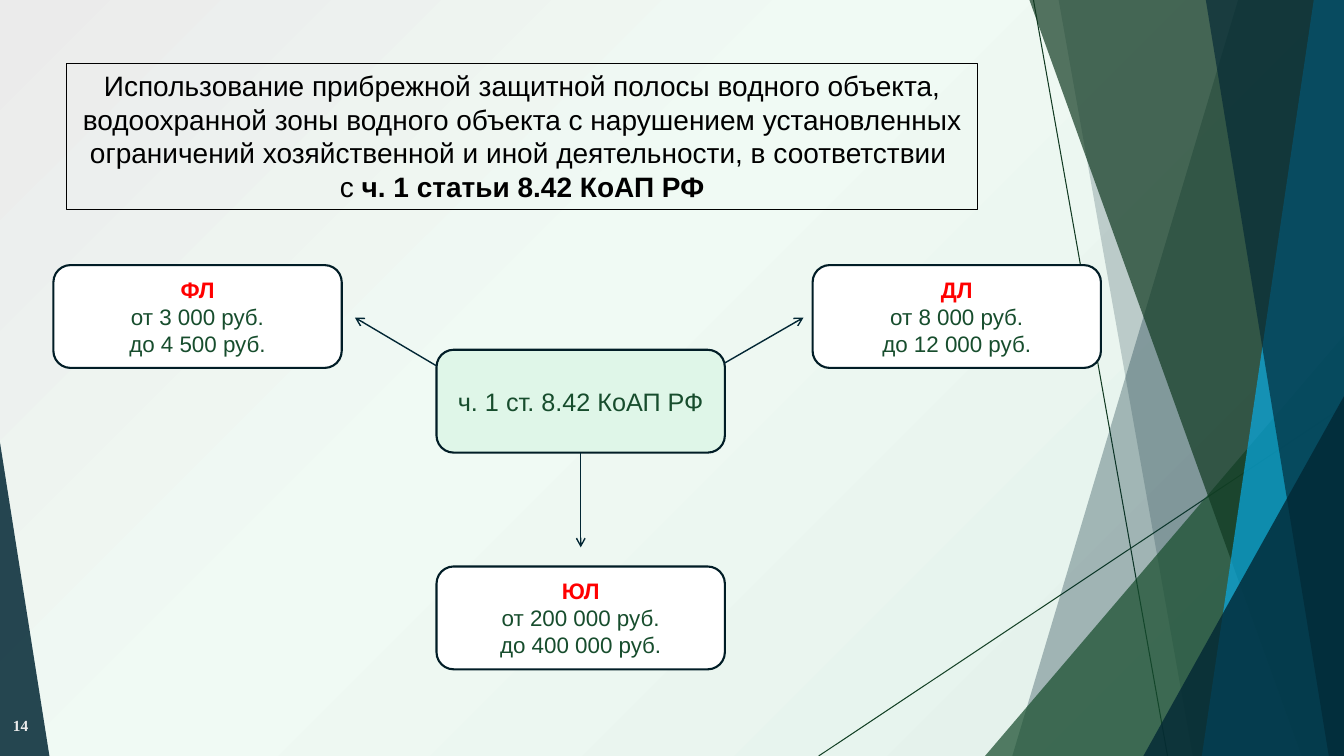
from dataclasses import dataclass

from lxml.etree import SubElement
from pptx import Presentation
from pptx.dml.color import RGBColor
from pptx.enum.shapes import MSO_CONNECTOR as CONN, MSO_SHAPE as SHAPE
from pptx.enum.text import MSO_ANCHOR as ANCHOR, MSO_AUTO_SIZE as AUTO, PP_ALIGN as ALIGN
from pptx.oxml import parse_xml
from pptx.oxml.ns import nsdecls, qn
from pptx.util import Inches, Pt

BLACK = RGBColor(0x00, 0x00, 0x00)
WHITE = RGBColor(0xFF, 0xFF, 0xFF)
RED = RGBColor(0xFF, 0x00, 0x00)
GREY = RGBColor(0xEB, 0xEB, 0xEB)
MINT = RGBColor(0xDF, 0xF6, 0xE8)
PALE = RGBColor(0xE1, 0xEF, 0xE9)
LIGHT = RGBColor(0xF0, 0xFA, 0xF4)
GREEN = RGBColor(0x17, 0x4D, 0x2D)
FOREST = RGBColor(0x11, 0x3A, 0x22)
MOSS = RGBColor(0x14, 0x41, 0x26)
NAVY = RGBColor(0x02, 0x27, 0x34)
OUTLINE = RGBColor(0x01, 0x1D, 0x26)
BLUE = RGBColor(0x09, 0xAB, 0xE4)

WIDTH, HEIGHT = 13.33, 7.5
BOX_W, BOX_H = 2.86, 1.02
BACKGROUND_STOPS = [(0, WHITE, 0), (0, PALE, 71), (58, LIGHT, 100), (100, GREY, 100)]


@dataclass
class Panel:
    """Slanted band reaching the right edge of the slide."""
    top_x: float
    bottom_x: float
    color: RGBColor
    opacity: int


@dataclass
class Triangle:
    """Right triangle standing on the bottom edge; apex 0 is left, 1 is right."""
    left: float
    top: float
    width: float
    apex: int
    color: RGBColor
    opacity: int


@dataclass
class Fine:
    left: float
    top: float
    who: str
    low: str
    high: str


FACETS = [
    Panel(12.28, 10.04, NAVY, 30),
    Panel(10.5, 11.83, NAVY, 20),
    Triangle(9.77, 3.33, 3.56, 1, GREEN, 72),
    Panel(10.21, 12.91, FOREST, 70),
    Panel(13.03, 11.92, BLUE, 70),
    Panel(11.96, 13.18, NAVY, 65),
    Triangle(11.34, 3.93, 1.99, 1, NAVY, 80),
    Triangle(0, 4.39, 0.49, 0, NAVY, 85),
]
FINES = [
    Fine(4.33, 5.62, "ЮЛ", "от 200 000 руб.", "до 400 000 руб."),
    Fine(8.06, 2.63, "ДЛ", "от 8 000 руб.", "до 12 000 руб."),
    Fine(0.53, 2.63, "ФЛ", "от 3 000 руб.", "до 4 500 руб."),
]


def set_background(s) -> None:
    stops = "".join(
        f'<a:gs pos="{pos * 1000}"><a:srgbClr val="{color}">'
        f'<a:alpha val="{opacity * 1000}"/></a:srgbClr></a:gs>'
        for pos, color, opacity in BACKGROUND_STOPS)
    bg = parse_xml(
        f'<p:bg {nsdecls("p", "a")}><p:bgPr><a:gradFill><a:gsLst>{stops}</a:gsLst>'
        '<a:path path="circle"><a:fillToRect l="100000" t="100000"/></a:path>'
        '</a:gradFill><a:effectLst/></p:bgPr></p:bg>')
    s._element.cSld.insert(0, bg)


def add_line(s, start: tuple[float, float], end: tuple[float, float],
             color: RGBColor, width: float, arrow: bool = False):
    line = s.shapes.add_connector(CONN.STRAIGHT, *map(Inches, start + end))
    line.line.color.rgb = color
    line.line.width = Pt(width)
    if arrow:
        SubElement(line.line._get_or_add_ln(), qn("a:tailEnd"), type="arrow")
    SubElement(line._element.spPr, qn("a:effectLst"))
    return line


def draw_facet(s, facet: Panel | Triangle) -> None:
    if isinstance(facet, Panel):
        corners = [(WIDTH, 0), (WIDTH, HEIGHT), (facet.bottom_x, HEIGHT)]
        builder = s.shapes.build_freeform(Inches(facet.top_x), 0)
        builder.add_line_segments([(Inches(x), Inches(y)) for x, y in corners])
        sp = builder.convert_to_shape()
    else:
        sp = s.shapes.add_shape(SHAPE.ISOSCELES_TRIANGLE, Inches(facet.left), Inches(facet.top),
                                Inches(facet.width), Inches(HEIGHT - facet.top))
        sp.adjustments[0] = facet.apex
    sp.shadow.inherit = False
    sp.line.fill.background()
    sp.fill.solid()
    sp.fill.fore_color.rgb = facet.color
    color = sp._element.spPr.find(f'{qn("a:solidFill")}/{qn("a:srgbClr")}')
    SubElement(color, qn("a:alpha"), val=str(facet.opacity * 1000))


def add_run(p, text: str, *, size: float, color: RGBColor, bold: bool = False,
            font: str = "Arial", align: ALIGN = ALIGN.CENTER) -> None:
    p.alignment = align
    r = p.add_run()
    r.text = text
    r.font.name, r.font.size, r.font.bold = font, Pt(size), bold
    r.font.color.rgb = color


def add_box(s, left: float, top: float, fill: RGBColor):
    sp = s.shapes.add_shape(SHAPE.ROUNDED_RECTANGLE, Inches(left), Inches(top),
                            Inches(BOX_W), Inches(BOX_H))
    sp.shadow.inherit = False
    sp.fill.solid()
    sp.fill.fore_color.rgb = fill
    sp.line.color.rgb = OUTLINE
    sp.line.width = Pt(1.5)
    sp.text_frame.vertical_anchor = ANCHOR.MIDDLE
    return sp


def add_heading(s) -> None:
    sp = s.shapes.title
    sp.left, sp.top, sp.width, sp.height = map(Inches, (0.66, 0.63, 9.04, 1.45))
    sp.line.color.rgb = BLACK
    sp.line.width = Pt(0.75)
    tf = sp.text_frame
    tf.word_wrap = True
    tf.auto_size = AUTO.SHAPE_TO_FIT_TEXT
    tf.vertical_anchor = ANCHOR.TOP
    add_run(tf.paragraphs[0], "Использование прибрежной защитной полосы водного объекта, "
            "водоохранной зоны водного объекта с нарушением установленных ограничений "
            "хозяйственной и иной деятельности, в соответствии ", size=20, color=BLACK)
    p = tf.add_paragraph()
    add_run(p, "с ", size=20, color=BLACK)
    add_run(p, "ч. 1 статьи 8.42 КоАП РФ", size=20, color=BLACK, bold=True)


def add_fine(s, fine: Fine) -> None:
    tf = add_box(s, fine.left, fine.top, WHITE).text_frame
    add_run(tf.paragraphs[0], fine.who, size=16, color=RED, bold=True)
    for amount in (fine.low, fine.high):
        add_run(tf.add_paragraph(), amount, size=16, color=GREEN)


def add_page_number(s) -> None:
    tf = s.shapes.add_textbox(Inches(-0.37), Inches(7), Inches(0.75), Inches(0.4)).text_frame
    tf.word_wrap = True
    tf.vertical_anchor = ANCHOR.MIDDLE
    add_run(tf.paragraphs[0], "14", size=11, color=GREY, bold=True,
            font="Times New Roman", align=ALIGN.RIGHT)


def main() -> None:
    prs = Presentation()
    prs.slide_width, prs.slide_height = Inches(WIDTH), Inches(HEIGHT)
    s = prs.slides.add_slide(prs.slide_layouts[5])

    # Background and decoration
    set_background(s)
    add_line(s, (10.25, 0), (11.58, HEIGHT), FOREST, 0.75)
    add_line(s, (WIDTH, 4.03), (8.12, HEIGHT), MOSS, 0.75)
    for facet in FACETS:
        draw_facet(s, facet)

    # Page number and heading
    add_page_number(s)
    add_heading(s)

    # Article in the centre with arrows to the fines
    article = add_box(s, 4.33, 3.47, MINT)
    add_run(article.text_frame.paragraphs[0], "ч. 1 ст. 8.42 КоАП РФ", size=18, color=GREEN)
    down = add_line(s, (5.76, 4.49), (5.76, 5.43), NAVY, 1, arrow=True)
    down.begin_connect(article, 2)
    add_line(s, (4.33, 3.63), (3.52, 3.15), NAVY, 1, arrow=True)
    add_line(s, (7.19, 3.6), (7.97, 3.15), NAVY, 1, arrow=True)
    for fine in FINES:
        add_fine(s, fine)

    prs.save("out.pptx")


if __name__ == "__main__":
    main()
